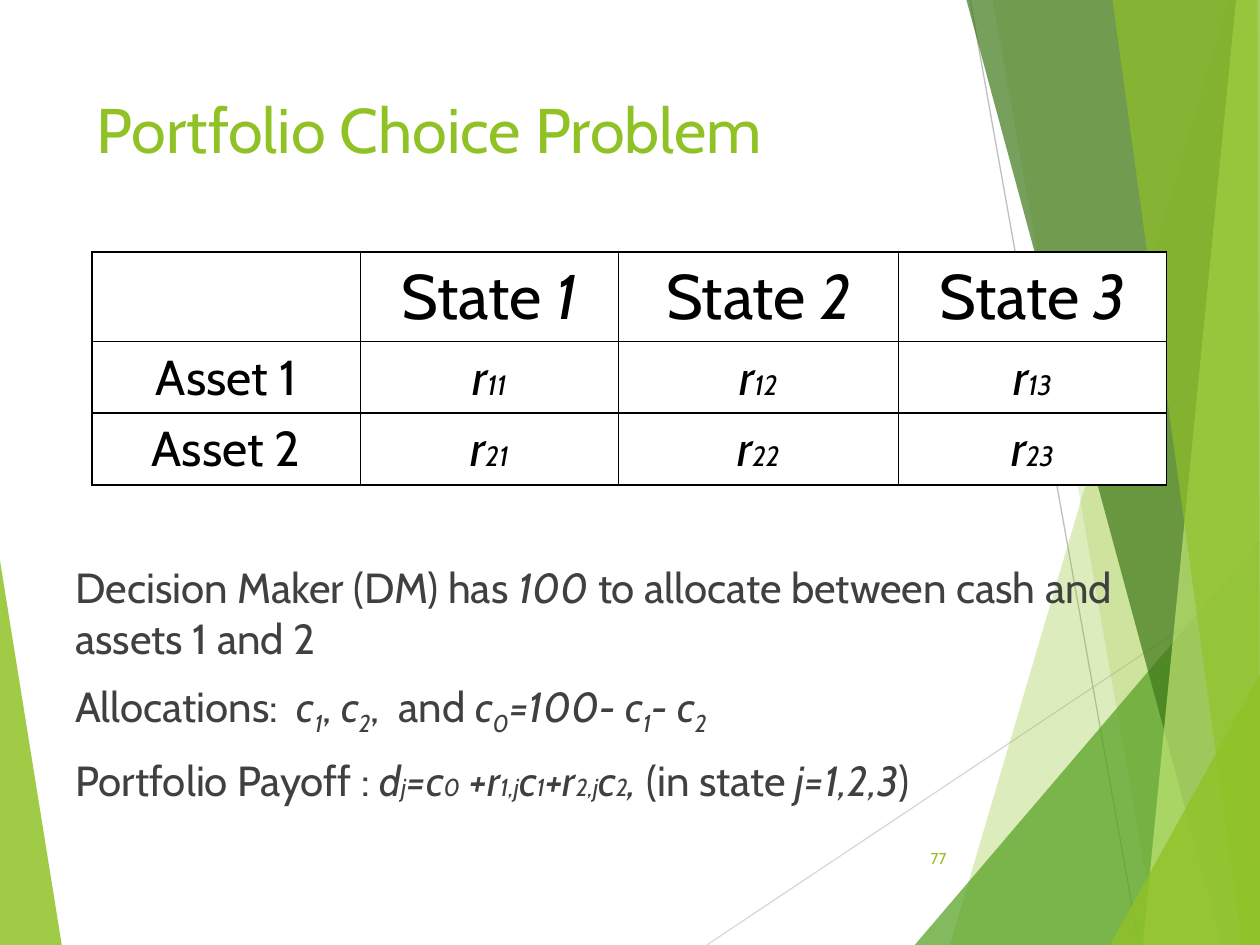
from typing import NamedTuple

from lxml.etree import SubElement
from pptx import Presentation
from pptx.dml.color import RGBColor
from pptx.enum.shapes import MSO_CONNECTOR
from pptx.enum.text import MSO_ANCHOR, PP_ALIGN
from pptx.oxml.ns import qn
from pptx.util import Inches, Pt

FONT = "Cabin"
COLORS = {
    "lime": "90C226", "green": "54A021", "forest": "3F7819", "pale": "C0E474",
    "silver": "D9D9D9", "gray": "BFBFBF", "text": "404040",
    "black": "000000", "white": "FFFFFF",
}


class Facet(NamedTuple):
    points: list[tuple[float, float]]
    color: str
    alpha: int


class Ray(NamedTuple):
    start: tuple[float, float]
    end: tuple[float, float]
    color: str


class Bit(NamedTuple):
    text: str
    size: float
    italic: bool = False
    base: int = 0


FACETS = [
    Facet([(9.75, 0), (7.54, 7.5), (10, 7.5), (10, 0)], "lime", 30),
    Facet([(7.88, 0), (9.19, 7.5), (10, 7.5), (10, 0)], "lime", 20),
    Facet([(7.26, 7.5), (10, 4.29), (10, 7.5)], "green", 72),
    Facet([(7.67, 0), (9.7, 7.5), (10, 7.5), (10, 0)], "forest", 70),
    Facet([(9.81, 0), (9.07, 7.5), (10, 7.5), (10, 0)], "pale", 70),
    Facet([(8.83, 0), (9.86, 7.5), (10, 7.5), (9.98, 0)], "lime", 65),
    Facet([(8.81, 7.5), (10, 5.35), (10, 7.5)], "lime", 80),
]
WEDGE = Facet([(0, 4.45), (0.49, 7.5), (0, 7.5)], "lime", 85)
RAYS = [
    Ray((5.61, 7.5), (10, 4.57), "silver"),
    Ray((7.7, 0), (9.04, 7.5), "gray"),
]


def rgb(name: str) -> RGBColor:
    return RGBColor.from_string(COLORS[name])


def draw_facet(slide, facet: Facet) -> None:
    points = [(Inches(x), Inches(y)) for x, y in facet.points]
    maker = slide.shapes.build_freeform(*points[0], scale=1.0)
    maker.add_line_segments(points[1:], close=True)
    shape = maker.convert_to_shape()
    shape.shadow.inherit = False
    shape.line.fill.background()
    shape.fill.solid()
    shape.fill.fore_color.rgb = rgb(facet.color)
    color = shape.fill._xPr.find(f".//{qn('a:srgbClr')}")
    SubElement(color, qn("a:alpha"), val=str(facet.alpha * 1000))


def draw_ray(slide, ray: Ray) -> None:
    ends = [Inches(value) for value in ray.start + ray.end]
    line = slide.shapes.add_connector(MSO_CONNECTOR.STRAIGHT, *ends)
    line.line.color.rgb = rgb(ray.color)
    line.line.width = Pt(0.75)
    SubElement(line._element.spPr, qn("a:effectLst"))


def write(para, bits: list[Bit], color: str) -> None:
    for bit in bits:
        run = para.add_run()
        run.text = bit.text
        font = run.font
        font.name, font.size, font.italic = FONT, Pt(bit.size), bit.italic
        font.color.rgb = rgb(color)
        if bit.base:
            font._element.set("baseline", str(bit.base * 1000))


def add_text(slide, box: tuple[float, ...], lines: list[list[Bit]], color: str):
    frame = slide.shapes.add_textbox(*map(Inches, box)).text_frame
    frame.word_wrap = True
    for index, bits in enumerate(lines):
        para = frame.add_paragraph() if index else frame.paragraphs[0]
        para.space_before = Pt(10 if index else 0)
        write(para, bits, color)
    return frame


def style_cell(cell) -> None:
    """Give the cell a thin black outline and a white fill."""
    props = cell._tc.get_or_add_tcPr()
    for side in ("lnL", "lnR", "lnT", "lnB"):
        edge = SubElement(props, qn(f"a:{side}"), w=str(Pt(1)))
        fill = SubElement(edge, qn("a:solidFill"))
        SubElement(fill, qn("a:srgbClr"), val=COLORS["black"])
    cell.fill.solid()
    cell.fill.fore_color.rgb = rgb("white")


def add_payoffs(slide) -> None:
    widths, heights = [2.13, 2.05, 2.22, 2.13], [0.71, 0.57, 0.57]
    rows = [[[]] + [[Bit("State ", 36), Bit(str(j), 36, True)] for j in (1, 2, 3)]]
    for i in (1, 2):
        rates = [[Bit("r", 28, True), Bit(f"{i}{j}", 16, True)] for j in (1, 2, 3)]
        rows.append([[Bit(f"Asset {i}", 28)]] + rates)
    table = slide.shapes.add_table(
        len(rows), len(widths), Inches(0.73), Inches(2),
        Inches(sum(widths)), Inches(sum(heights))).table
    for column, width in zip(table.columns, widths):
        column.width = Inches(width)
    for row, height, line in zip(table.rows, heights, rows):
        row.height = Inches(height)
        for cell, bits in zip(row.cells, line):
            style_cell(cell)
            para = cell.text_frame.paragraphs[0]
            para.alignment = PP_ALIGN.CENTER
            write(para, bits, "black")


def plain(text: str) -> Bit:
    return Bit(text, 24)


def math(text: str) -> Bit:
    return Bit(text, 24, True)


def sub(text: str) -> Bit:
    return Bit(text, 24, True, -25)


def small(text: str) -> Bit:
    return Bit(text, 14, True)


BODY = [
    [plain("Decision Maker (DM) has "), math("100 "),
     plain("to allocate between cash and assets 1 and 2")],
    [plain("Allocations:  "), math("c"), sub("1"), plain(", "), math("c"), sub("2"),
     plain(",  and "), math("c"), sub("0"), math("=100- c"), sub("1"),
     math("- c"), sub("2")],
    [plain("Portfolio Payoff : "), math("d"), small("j"), math("=c"), small("0"),
     math(" +r"), small("1,j"), math("c"), small("1"), math("+r"), small("2,j"),
     math("c"), small("2"), math(", "), plain("(in state "), math("j=1,2,3"),
     plain(")")],
]


def main() -> None:
    deck = Presentation()
    deck.slide_width, deck.slide_height = Inches(10), Inches(7.5)
    slide = deck.slides.add_slide(deck.slide_layouts[6])
    draw_facet(slide, WEDGE)
    for ray in RAYS:
        draw_ray(slide, ray)
    for facet in FACETS:
        draw_facet(slide, facet)
    add_text(slide, (0.67, 0.67, 6.94, 1.44),
             [[Bit("Portfolio Choice Problem", 36)]], "lime")
    add_text(slide, (0.5, 4.41, 9, 2.54), BODY, "text")
    number = add_text(slide, (7.05, 6.61, 0.56, 0.4), [[Bit("77", 9)]], "lime")
    number.vertical_anchor = MSO_ANCHOR.MIDDLE
    number.paragraphs[0].alignment = PP_ALIGN.RIGHT
    add_payoffs(slide)
    deck.save("out.pptx")


if __name__ == "__main__":
    main()
